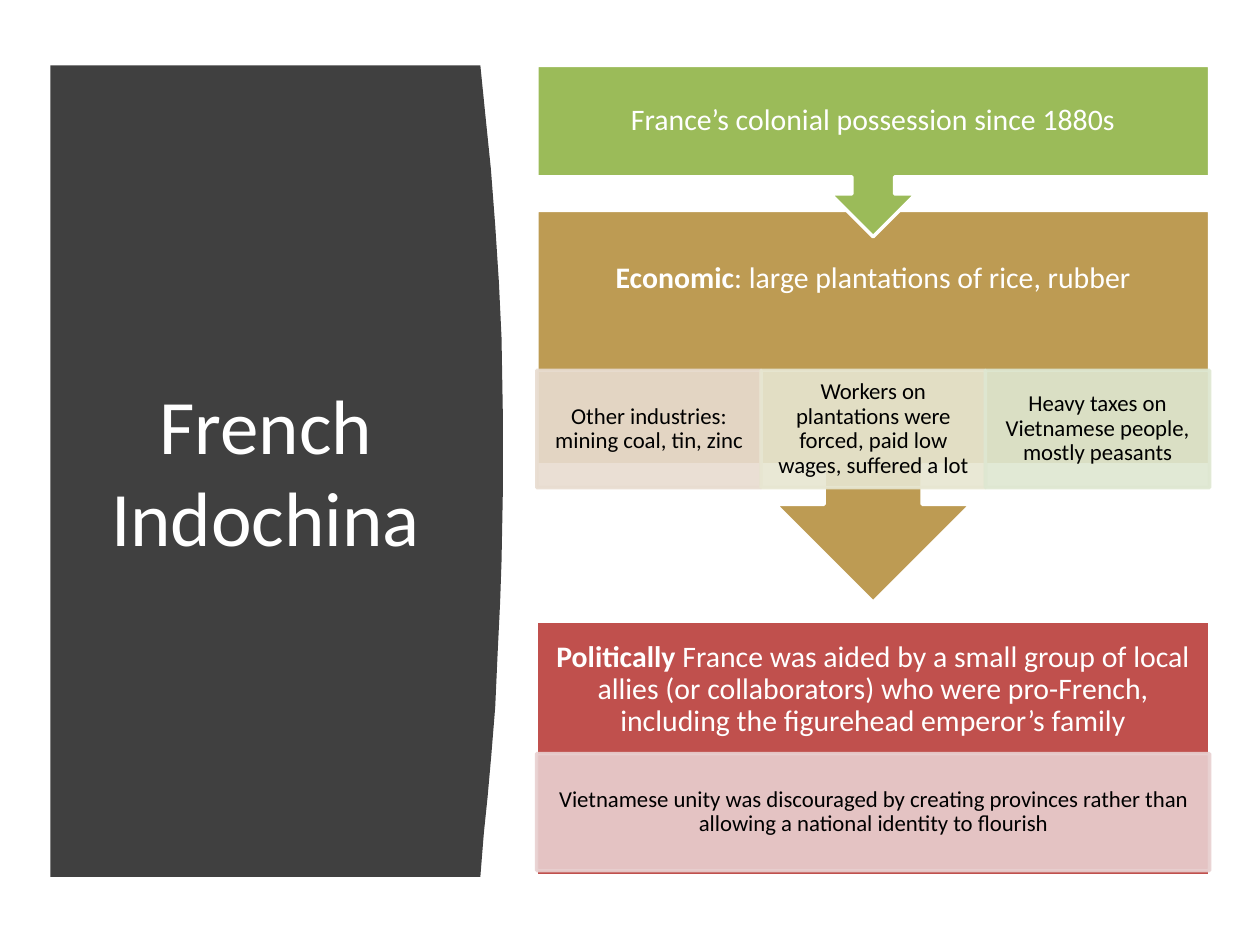
from lxml import etree
from pptx import Presentation
from pptx import util as u
from pptx.dml import color
from pptx.enum import shapes, text
from pptx.oxml import ns

LEFT, WIDTH = 306.72, 384.48
PANEL_HEIGHT = 66.96
WHITE, BLACK = "FFFFFF", "000000"
CURVED_EDGE = [
    (274.5, 37.4), (277.2, 64.1), (280.5, 96.5), (283, 128.9),
    (285.1, 161.3), (286.6, 193), (287.3, 234), (287.3, 283.7),
    (286.6, 321), (285.8, 344), (284.4, 373), (283, 404),
    (280.8, 431.3), (278.6, 455.8), (276.5, 476), (274.5, 501.1),
]


def paint(target, value, alpha=None):
    """Give a fill a solid colour, with opacity in percent if stated."""
    target.solid()
    target.fore_color.rgb = color.RGBColor.from_string(value)
    if alpha is not None:
        for node in target._xPr.iter(ns.qn("a:srgbClr")):
            if node.getparent().getparent() is target._xPr:
                etree.SubElement(node, ns.qn("a:alpha"), val=str(alpha * 1000))


def write(shape, spans, size, ink, insets, spacing=0.9):
    """Write centred text from (wording, bold) spans."""
    frame = shape.text_frame
    frame.word_wrap = True
    frame.vertical_anchor = text.MSO_ANCHOR.MIDDLE
    side, end = insets
    frame.margin_left = frame.margin_right = u.Pt(side)
    frame.margin_top = frame.margin_bottom = u.Pt(end)
    para = frame.paragraphs[0]
    para.alignment = text.PP_ALIGN.CENTER
    para.line_spacing = spacing
    for wording, bold in spans:
        span = para.add_run()
        span.text = wording
        span.font.name = "Calibri"
        span.font.size = u.Pt(size)
        span.font.bold = bold
        span.font.color.rgb = color.RGBColor.from_string(ink)


def add_text(page, bounds, spans, size, insets, spacing=0.9):
    """Add a white text box."""
    box = page.shapes.add_textbox(*map(u.Pt, bounds))
    write(box, spans, size, WHITE, insets, spacing)


def add_block(page, kind, bounds, fill, line, alpha=None):
    """Add a filled and outlined preset shape."""
    shape = page.shapes.add_shape(kind, *map(u.Pt, bounds))
    shape.shadow.inherit = False
    paint(shape.fill, fill, alpha)
    paint(shape.line.fill, line, alpha)
    shape.line.width = u.Pt(2)
    return shape


def add_stage(page, kind, top, height, text_height, fill, spans):
    """Add a full-width stage with its heading; callouts point down."""
    block = add_block(page, kind, (LEFT, top, WIDTH, height), fill, WHITE)
    if kind == shapes.MSO_SHAPE.UP_ARROW_CALLOUT:
        block.rotation = 180
    add_text(page, (LEFT, top, WIDTH, text_height), spans, 17, (9.5, 9.5))


def add_panels(page, top, panels):
    """Share the full width equally among translucent detail panels."""
    width = WIDTH / len(panels)
    for index, (wording, fill) in enumerate(panels):
        bounds = (LEFT + index * width, top, width, PANEL_HEIGHT)
        panel = add_block(page, shapes.MSO_SHAPE.RECTANGLE, bounds, fill, fill, 90)
        write(panel, [(wording, False)], 13, BLACK, (7, 1.3))


def add_title(page, wording):
    """Add the dark curved title panel."""
    builder = page.shapes.build_freeform(u.Pt(28.8), u.Pt(37.4))
    corners = CURVED_EDGE + [(28.8, 501.1)]
    builder.add_line_segments([(u.Pt(x), u.Pt(y)) for x, y in corners], close=True)
    panel = builder.convert_to_shape()
    panel.shadow.inherit = False
    paint(panel.fill, "404040")
    panel.line.fill.background()
    add_text(page, (51.1, 79.9, 201.6, 377.3), [(wording, False)], 44, (7.2, 3.6), 1)


def main():
    """Build and save the slide."""
    deck = Presentation()
    deck.slide_width, deck.slide_height = u.Pt(720), u.Pt(540)
    page = deck.slides.add_slide(deck.slide_layouts[6])
    callout = shapes.MSO_SHAPE.UP_ARROW_CALLOUT
    add_title(page, "French Indochina")
    add_stage(page, shapes.MSO_SHAPE.RECTANGLE, 355, 145.4, 78.5, "C0504D", [
        ("Politically", True),
        (" France was aided by a small group of local allies (or collaborators) "
         "who were pro-French, including the figurehead emperor’s family", False),
    ])
    add_panels(page, 430.6, [
        ("Vietnamese unity was discouraged by creating provinces rather than "
         "allowing a national identity to flourish", "E8D0D0"),
    ])
    add_stage(page, callout, 120.2, 223.9, 78.5, "BD9B53", [
        ("Economic", True), (": large plantations of rice, rubber", False),
    ])
    add_panels(page, 211.7, [
        ("Other industries: mining coal, tin, zinc", "E8DCD0"),
        ("Workers on plantations were forced, paid low wages, suffered a lot", "E7E6D1"),
        ("Heavy taxes on Vietnamese people, mostly peasants", "DEE7D1"),
    ])
    add_stage(page, callout, 37.4, 97.9, 63.4, "9BBB59", [
        ("France’s colonial possession since 1880s", False),
    ])
    deck.save("out.pptx")


if __name__ == "__main__":
    main()
